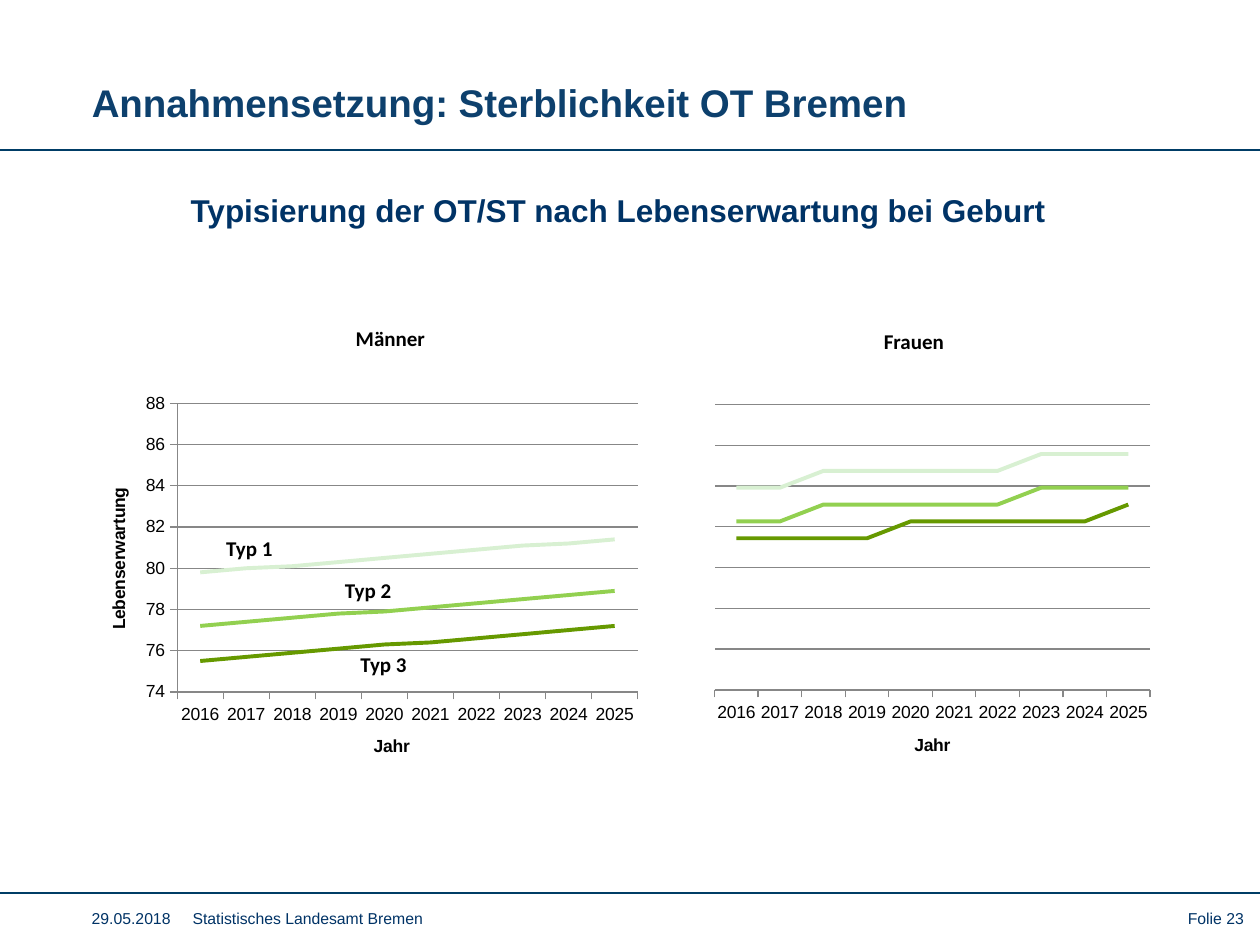
from lxml import etree
from pptx import Presentation
from pptx.chart.data import CategoryChartData
from pptx.dml.color import RGBColor
from pptx.enum.chart import XL_CHART_TYPE, XL_TICK_MARK
from pptx.enum.shapes import MSO_CONNECTOR
from pptx.enum.text import MSO_ANCHOR, PP_ALIGN
from pptx.oxml import parse_xml
from pptx.oxml.ns import nsdecls, qn
from pptx.util import Inches, Pt

LINE = XL_CHART_TYPE.LINE
OUT, NONE = XL_TICK_MARK.OUTSIDE, XL_TICK_MARK.NONE
STRAIGHT = MSO_CONNECTOR.STRAIGHT
LEFT, RIGHT = PP_ALIGN.LEFT, PP_ALIGN.RIGHT
TOP, MIDDLE = MSO_ANCHOR.TOP, MSO_ANCHOR.MIDDLE

COLS, ROWS = 100, 75
WIDE, HIGH = Inches(10), Inches(7.5)
NAVY, BLACK, GRAY = "003366", "000000", "878787"
GREENS = ["D8F0D2", "92D050", "669900"]
YEARS = [str(year) for year in range(2016, 2026)]
MEN = [
    [79.8, 80, 80.1, 80.3, 80.5, 80.7, 80.9, 81.1, 81.2, 81.4],
    [77.2, 77.4, 77.6, 77.8, 77.9, 78.1, 78.3, 78.5, 78.7, 78.9],
    [75.5, 75.7, 75.9, 76.1, 76.3, 76.4, 76.6, 76.8, 77, 77.2],
]
WOMEN = [
    [98, 98, 99, 99, 99, 99, 99, 100, 100, 100],
    [96, 96, 97, 97, 97, 97, 97, 98, 98, 98],
    [95, 95, 95, 95, 96, 96, 96, 96, 96, 97],
]


def paint(code):
    return RGBColor.from_string(code)


def grid(box):
    x, y, w, h = box
    return (int(WIDE * x / COLS), int(HIGH * y / ROWS),
            int(WIDE * w / COLS), int(HIGH * h / ROWS))


def style(item, values):
    for name, value in values.items():
        setattr(item, name, value)


def ink(font, size, color, bold=False, name="Arial"):
    style(font, {"size": Pt(size), "bold": bold, "name": name})
    font.color.rgb = paint(color)


def stroke(line, color, width):
    line.color.rgb = paint(color)
    line.width = Pt(width)


def write(slide, box, text, size, color, bold=False, name="Arial",
          align=LEFT, anchor=TOP, space=1.0, wrap=True):
    shape = slide.shapes.add_textbox(*grid(box))
    style(shape.text_frame, {"word_wrap": wrap, "vertical_anchor": anchor})
    para = shape.text_frame.paragraphs[0]
    style(para, {"alignment": align, "line_spacing": space})
    run = para.add_run()
    run.text = text
    ink(run.font, size, color, bold, name)
    return shape


def rule(slide, row):
    x, y, w, _ = grid((0, row, COLS, 0))
    line = slide.shapes.add_connector(STRAIGHT, x, y, x + w, y)
    stroke(line.line, "003D66", 1.25)
    etree.SubElement(line.element.spPr, qn("a:effectLst"))


def header(slide, box):
    x, y, w, h = box
    write(slide, box, "Annahmensetzung: Sterblichkeit OT Bremen",
          22, "0D406D", True, anchor=MIDDLE)
    rule(slide, y + h + 0.15)


def footer(slide, box):
    x, y, w, h = box
    rule(slide, y - 0.7)
    note = write(slide, (x, y, 35, h),
                 "29.05.2018\tStatistisches Landesamt Bremen", 9, NAVY)
    props = note.text_frame.paragraphs[0].runs[0].font
    stops = etree.SubElement(note.element.find(".//" + qn("a:pPr")),
                             qn("a:tabLst"))
    etree.SubElement(stops, qn("a:tab"), pos=str(grid((8, 0, 0, 0))[0]),
                     algn="l")
    write(slide, (x + w - 8.7, y, 8.7, h), "Folie 23", 9, NAVY, align=RIGHT)


def place(chart, plot):
    area = chart.element.find(".//" + qn("c:plotArea"))
    for old in area.findall(qn("c:layout")):
        area.remove(old)
    modes = '<c:layoutTarget val="inner"/><c:xMode val="edge"/><c:yMode val="edge"/>'
    sizes = "".join(f'<c:{key} val="{val}"/>' for key, val in zip("xywh", plot))
    area.insert(0, parse_xml(
        f'<c:layout {nsdecls("c")}><c:manualLayout>{modes}{sizes}'
        '</c:manualLayout></c:layout>'))


def label(axis, text):
    run = axis.axis_title.text_frame.paragraphs[0].add_run()
    run.text = text
    ink(run.font, 10, BLACK, True)


def graph(slide, box, plot, rows, scale, title=None):
    data = CategoryChartData()
    data.categories = YEARS
    for index, row in enumerate(rows, 1):
        data.add_series(f"Typ {index}", row)
    chart = slide.shapes.add_chart(LINE, *grid(box), data).chart
    style(chart, {"has_title": False, "has_legend": False})
    ink(chart.font, 10, BLACK)
    chart.plots[0].vary_by_categories = False
    for line, color in zip(chart.plots[0].series, GREENS):
        line.smooth = False
        stroke(line.format.line, color, 2.25)
    base, side = chart.category_axis, chart.value_axis
    low, high, step = scale
    style(side, {"minimum_scale": low, "maximum_scale": high,
                 "major_unit": step, "has_major_gridlines": True,
                 "visible": title is not None})
    for axis in (base, side):
        style(axis, {"major_tick_mark": OUT, "minor_tick_mark": NONE})
        stroke(axis.format.line, GRAY, 0.75)
    stroke(side.major_gridlines.format.line, GRAY, 0.75)
    label(base, "Jahr")
    if title:
        label(side, title)
    place(chart, plot)


def men(slide, box):
    x, y, w, h = box
    graph(slide, box, (0.171, 0.051, 0.807, 0.744), MEN, (74, 88, 2),
          "Lebenserwartung")
    marks = [("Männer", 0.462, -0.165, 1), ("Typ 1", 0.235, 0.365, 1.15),
             ("Typ 2", 0.443, 0.473, 1.15), ("Typ 3", 0.47, 0.665, 1.15)]
    for text, dx, dy, space in marks:
        write(slide, (x + w * dx, y + h * dy, 7.9, 3.3), text, 12, BLACK, True,
              "Calibri", space=space, wrap=False)


def women(slide, box):
    x, y, w, h = box
    graph(slide, box, (0.07, 0.111, 0.905, 0.685), WOMEN, (86, 103, 2.42))
    write(slide, (x + w * 0.396, y - h * 0.083, 7.1, 3.3), "Frauen", 12, BLACK,
          True, "Calibri", wrap=False)


def main():
    deck = Presentation()
    style(deck, {"slide_width": WIDE, "slide_height": HIGH})
    slide = deck.slides.add_slide(deck.slide_layouts[6])
    header(slide, (6.3, 4.45, 79.1, 7.3))
    footer(slide, (6.3, 71.6, 93.4, 2.8))
    head = write(slide, (14.15, 14.7, 70.6, 4),
                 "Typisierung der OT/ST nach Lebenserwartung bei Geburt",
                 18, NAVY, True, wrap=False)
    head.fill.solid()
    head.fill.fore_color.rgb = paint("FFFFFF")
    men(slide, (6.32, 30.44, 45.3, 30.8))
    women(slide, (54.04, 28.34, 38.2, 33.2))
    deck.save("out.pptx")


if __name__ == "__main__":
    main()
